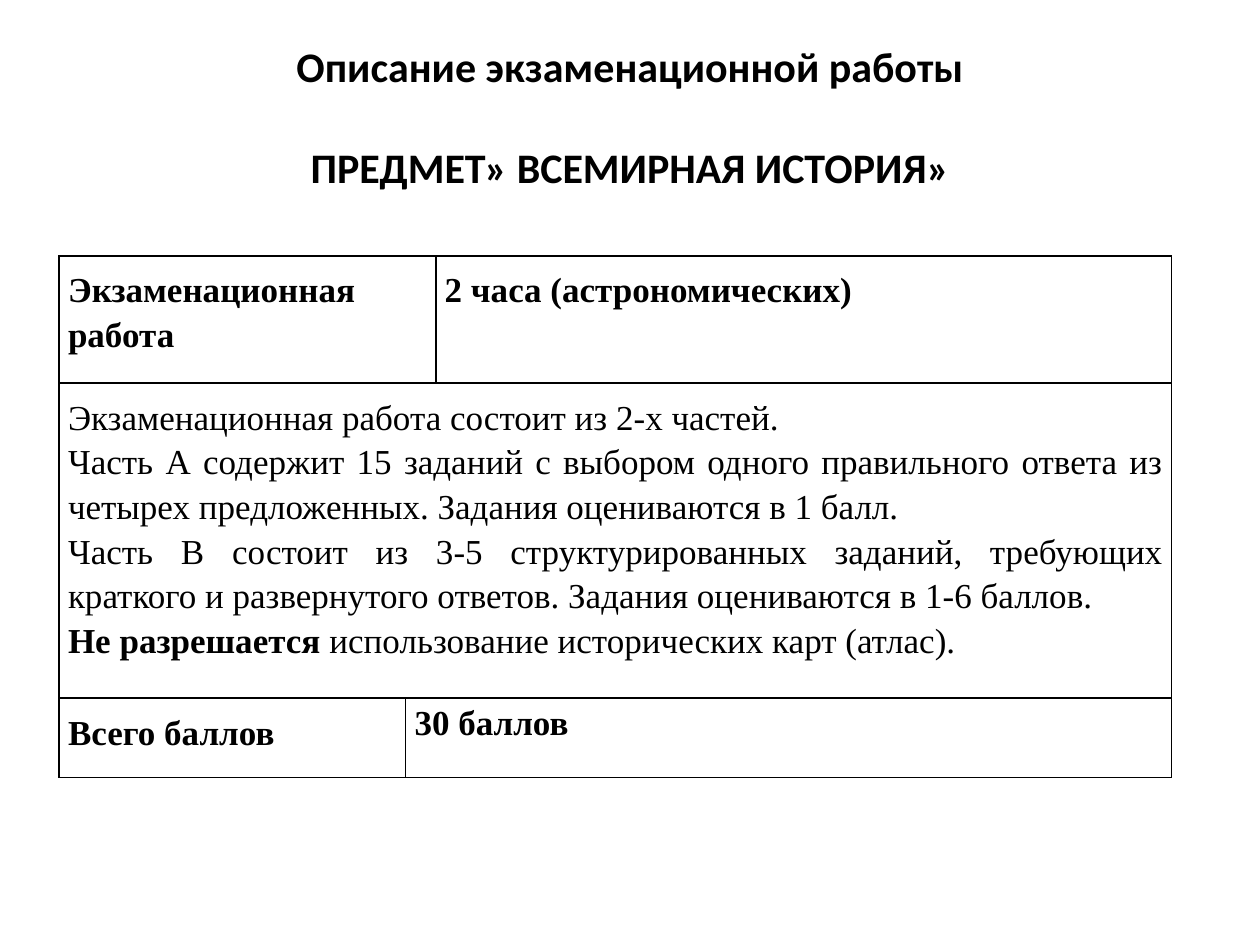
"""Build the slide that describes the world history exam paper."""
from lxml.etree import SubElement
from pptx import Presentation
from pptx.dml.color import RGBColor
from pptx.enum.text import MSO_ANCHOR, PP_ALIGN
from pptx.oxml.ns import qn
from pptx.util import Inches, Pt

COLORS = {"text": "000000", "border": "000000"}
TITLE_LINES = ["Описание экзаменационной работы", "ПРЕДМЕТ» ВСЕМИРНАЯ ИСТОРИЯ»"]
COLUMN_WIDTHS = [2.75, 0.24, 5.84]
ROW_HEIGHTS = [1.01, 2.5, 0.63]
LEFT, JUSTIFY = PP_ALIGN.LEFT, PP_ALIGN.JUSTIFY

# row, first column, last column, vertical margin, alignment, paragraphs of (text, bold)
CELLS = [
    (0, 0, 1, 0.08, LEFT, [[("Экзаменационная работа", True)]]),
    (0, 2, 2, 0.08, LEFT, [[("2 часа (астрономических)", True)]]),
    (1, 0, 2, 0.08, JUSTIFY, [
        [("Экзаменационная работа состоит из 2-х частей.", False)],
        [("Часть А содержит 15 заданий с выбором одного правильного ответа из "
          "четырех предложенных. Задания оцениваются в 1 балл.", False)],
        [("Часть В состоит из 3-5 структурированных заданий, требующих краткого "
          "и развернутого ответов. Задания оцениваются в 1-6 баллов.", False)],
        [("Не разрешается", True), (" использование исторических карт (атлас).", False)],
    ]),
    (2, 0, 0, 0.08, JUSTIFY, [[("Всего баллов", True)]]),
    (2, 1, 2, 0, JUSTIFY, [[("30 баллов", True)]]),
]


def style_font(font, name, size):
    font.name = name
    font.size = Pt(size)
    font.color.rgb = RGBColor.from_string(COLORS["text"])


def add_borders(cell):
    properties = cell._tc.get_or_add_tcPr()
    for side in ("a:lnL", "a:lnR", "a:lnT", "a:lnB"):
        line = SubElement(properties, qn(side), w=str(Pt(1)))
        fill = SubElement(line, qn("a:solidFill"))
        SubElement(fill, qn("a:srgbClr"), val=COLORS["border"])


deck = Presentation()
deck.slide_width, deck.slide_height = Inches(10), Inches(7.5)
page = deck.slides.add_slide(deck.slide_layouts[5])

title = page.shapes.title
title.left, title.top = Inches(0.5), Inches(0.3)
title.width, title.height = Inches(9), Inches(1.25)
title.text_frame.vertical_anchor = MSO_ANCHOR.MIDDLE
title.text_frame.text = "\n".join(TITLE_LINES)
for para in title.text_frame.paragraphs:
    para.alignment = PP_ALIGN.CENTER
    style_font(para.font, "Calibri", 24)
    para.font.bold = True
title.text_frame.paragraphs[1].space_before = Pt(29)

table = page.shapes.add_table(
    len(ROW_HEIGHTS), len(COLUMN_WIDTHS), Inches(0.47), Inches(2.03),
    Inches(sum(COLUMN_WIDTHS)), Inches(sum(ROW_HEIGHTS))).table
table.first_row = table.horz_banding = False
for column, width in zip(table.columns, COLUMN_WIDTHS):
    column.width = Inches(width)
for row, height in zip(table.rows, ROW_HEIGHTS):
    row.height = Inches(height)
for cell in table.iter_cells():
    add_borders(cell)
    cell.fill.background()

for row, first, last, margin, alignment, paragraphs in CELLS:
    cell = table.cell(row, first)
    if last > first:
        cell.merge(table.cell(row, last))
    cell.margin_left = cell.margin_right = Inches(0.07)
    cell.margin_top = cell.margin_bottom = Inches(margin)
    for index, spans in enumerate(paragraphs):
        frame = cell.text_frame
        para = frame.add_paragraph() if index else frame.paragraphs[0]
        para.alignment = alignment
        para.line_spacing = 1.15
        style_font(para.font, "Times New Roman", 20)
        for text, bold in spans:
            span = para.add_run()
            span.text = text
            span.font.bold = bold

deck.save("out.pptx")
